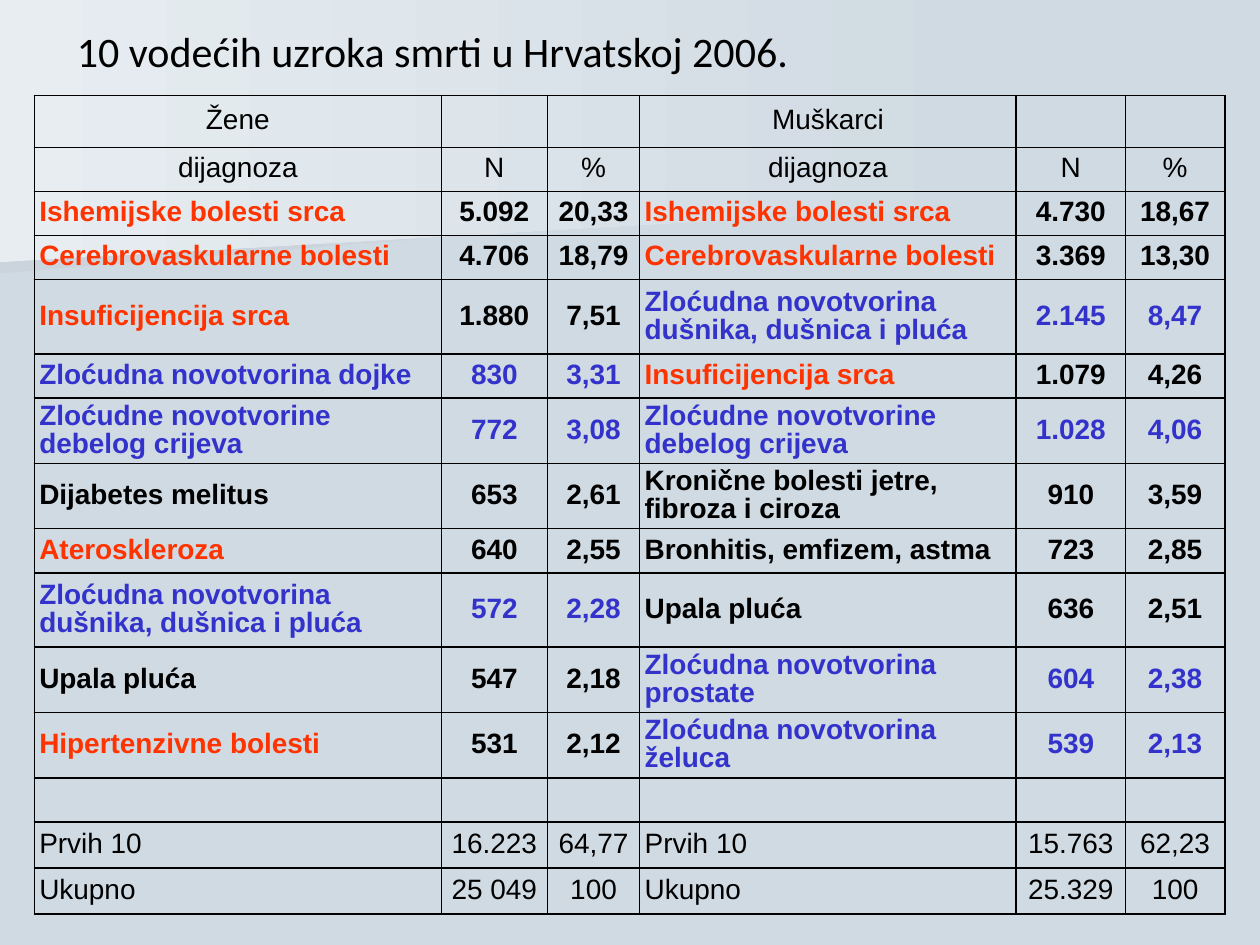
import pptx
import pptx.util
import pptx.dml.color
import pptx.enum.text
import pptx.oxml

Pt = pptx.util.Pt
Rgb = pptx.dml.color.RGBColor.from_string
Align = pptx.enum.text.PP_ALIGN
Anchor = pptx.enum.text.MSO_ANCHOR

tones = {"ink": "000000", "red": "FF3300", "blue": "3333CC",
         "back": "D0DAE2", "low": "CBD4DC", "high": "E7EDF1"}

lung = "Zloćudna novotvorina dušnika, dušnica i pluća"
bowel = "Zloćudne novotvorine debelog crijeva"
heart = "Ishemijske bolesti srca"
brain = "Cerebrovaskularne bolesti"
fail = "Insuficijencija srca"

short, mid, tall = 25.2, 37.4, 42.4
rows = [
    (29.5, "ink", ("Žene", "", ""), "ink", ("Muškarci", "", "")),
    (short, "ink", ("dijagnoza", "N", "%"), "ink", ("dijagnoza", "N", "%")),
    (short, "red", (heart, "5.092", "20,33"), "red", (heart, "4.730", "18,67")),
    (short, "red", (brain, "4.706", "18,79"), "red", (brain, "3.369", "13,30")),
    (tall, "red", (fail, "1.880", "7,51"), "blue", (lung, "2.145", "8,47")),
    (short, "blue", ("Zloćudna novotvorina dojke", "830", "3,31"),
     "red", (fail, "1.079", "4,26")),
    (mid, "blue", (bowel, "772", "3,08"), "blue", (bowel, "1.028", "4,06")),
    (mid, "ink", ("Dijabetes melitus", "653", "2,61"),
     "ink", ("Kronične bolesti jetre, fibroza i ciroza", "910", "3,59")),
    (short, "red", ("Ateroskleroza", "640", "2,55"),
     "ink", ("Bronhitis, emfizem, astma", "723", "2,85")),
    (tall, "blue", (lung, "572", "2,28"), "ink", ("Upala pluća", "636", "2,51")),
    (mid, "ink", ("Upala pluća", "547", "2,18"),
     "blue", ("Zloćudna novotvorina prostate", "604", "2,38")),
    (mid, "red", ("Hipertenzivne bolesti", "531", "2,12"),
     "blue", ("Zloćudna novotvorina želuca", "539", "2,13")),
    (short, "ink", ("", "", ""), "ink", ("", "", "")),
    (26.2, "ink", ("Prvih 10", "16.223", "64,77"),
     "ink", ("Prvih 10", "15.763", "62,23")),
    (26.4, "ink", ("Ukupno", "25 049", "100"), "ink", ("Ukupno", "25.329", "100")),
]
widths = [232.6, 60.6, 52.8, 215.2, 62.4, 56.8]


def style(run, size, face, tone, bold=False):
    font = run.font
    font.size = Pt(size)
    font.name = face
    font.bold = bold
    font.color.rgb = Rgb(tones[tone])


def frame(cell):
    props = cell._tc.get_or_add_tcPr()
    for spot, side in enumerate(("lnL", "lnR", "lnT", "lnB")):
        line = pptx.oxml.parse_xml(
            f'<a:{side} xmlns:a="http://schemas.openxmlformats.org/drawingml/2006/main" '
            f'w="12700"><a:solidFill><a:srgbClr val="{tones["ink"]}"/></a:solidFill></a:{side}>')
        props.insert(spot, line)


deck = pptx.Presentation()
deck.slide_width = Pt(720)
deck.slide_height = Pt(540)
slide = deck.slides.add_slide(deck.slide_layouts[5])
slide.background.fill.solid()
slide.background.fill.fore_color.rgb = Rgb(tones["back"])
shapes = slide.shapes

waves = [
    ("low", [(560.2, 110.2), (0, 156.2), (0, 72.7), (560.9, 72.7), (560.2, 92.2)]),
    ("high", [(570.2, 116.6), (0, 149.8), (0, 0), (570.2, 0)]),
]
for tone, points in waves:
    pen = shapes.build_freeform(Pt(points[0][0]), Pt(points[0][1]))
    pen.add_line_segments([(Pt(x), Pt(y)) for x, y in points[1:]], close=True)
    wave = pen.convert_to_shape()
    wave.shadow.inherit = False
    wave.line.fill.background()
    wave.fill.gradient()
    wave.fill.gradient_angle = 0
    for stop, name, place in zip(wave.fill.gradient_stops, (tone, "back"), (0, 1)):
        stop.color.rgb = Rgb(tones[name])
        stop.position = place

title = shapes.title
shapes._spTree.append(title._element)
title.left, title.top, title.width, title.height = Pt(36.7), Pt(15.1), Pt(648), Pt(27.4)
title.text_frame.vertical_anchor = Anchor.MIDDLE
para = title.text_frame.paragraphs[0]
para.alignment = Align.LEFT
run = para.add_run()
run.text = "10 vodećih uzroka smrti u Hrvatskoj 2006."
style(run, 24, "Calibri", "ink")

table = shapes.add_table(len(rows), len(widths), Pt(19.6), Pt(54.7),
                         Pt(sum(widths)), Pt(sum(row[0] for row in rows))).table
table.first_row = False
table.horz_banding = False
for column, width in zip(table.columns, widths):
    column.width = Pt(width)

for r, (height, left, women, right, men) in enumerate(rows):
    table.rows[r].height = Pt(height)
    for c, text in enumerate(women + men):
        cell = table.cell(r, c)
        cell.fill.background()
        frame(cell)
        cell.margin_left = cell.margin_right = Pt(2.9)
        cell.margin_top = cell.margin_bottom = Pt(1.4)
        cell.vertical_anchor = Anchor.MIDDLE
        if not text:
            continue
        label = c % 3 == 0
        tone = left if c < 3 else right
        if tone == "red" and not label:
            tone = "ink"
        para = cell.text_frame.paragraphs[0]
        para.line_spacing = 0.9
        para.alignment = Align.LEFT if label and r > 1 else Align.CENTER
        run = para.add_run()
        run.text = text
        style(run, 16, "Arial", tone, 2 <= r <= 11)

deck.save("out.pptx")
